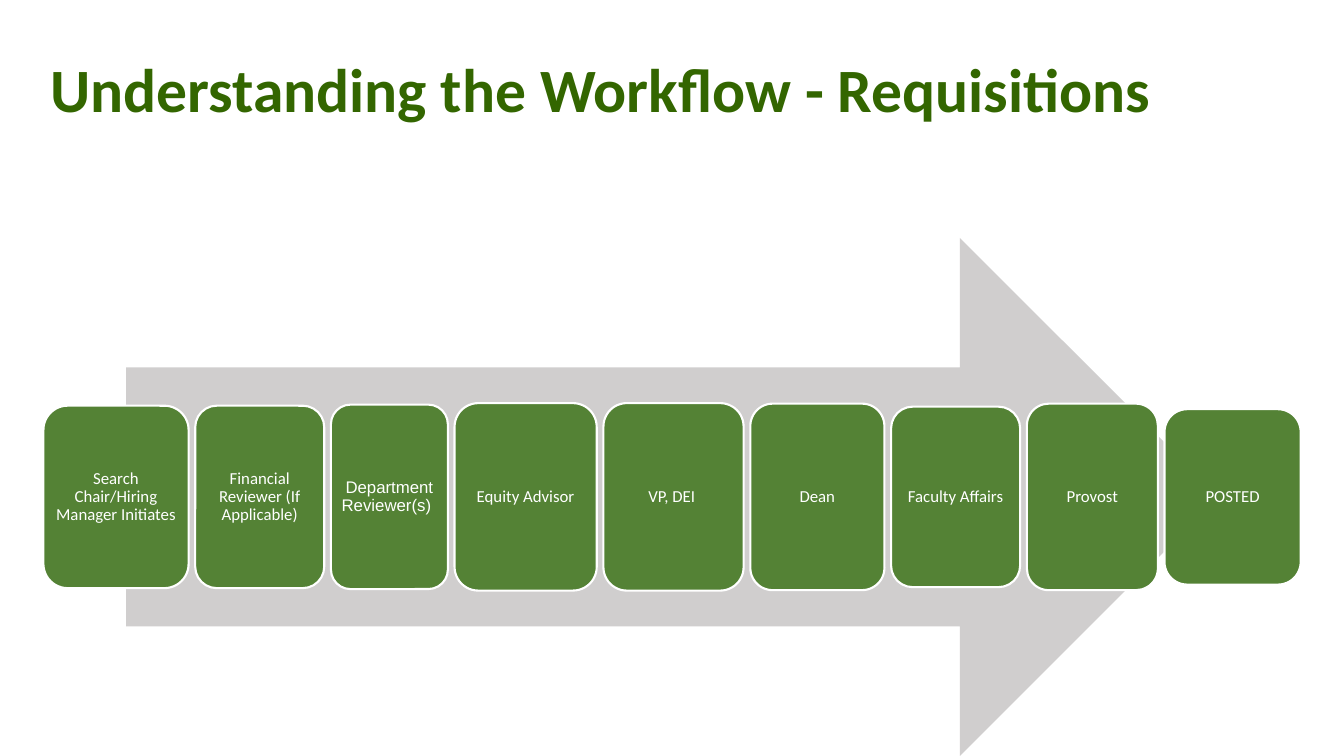
import pptx
import pptx.dml.color
import pptx.enum.shapes
import pptx.enum.text
import pptx.util

DARK_GREEN = pptx.dml.color.RGBColor(0x33, 0x66, 0x00)
STEP_GREEN = pptx.dml.color.RGBColor(0x54, 0x82, 0x35)
ARROW_GRAY = pptx.dml.color.RGBColor(0xD0, 0xCE, 0xCE)
WHITE = pptx.dml.color.RGBColor(0xFF, 0xFF, 0xFF)

SLIDE_WIDTH = pptx.util.Inches(13.33)
SLIDE_HEIGHT = pptx.util.Inches(7.5)
COLUMN = SLIDE_WIDTH / 100
ROW = SLIDE_HEIGHT / 100

TITLE_BOX = (3, 2.53, 86.27, 19.33)
ARROW_BOX = (9.38, 31.47, 81.32, 68.53)
STEPS_BOX = (3.23, 53.33, 93.55, 24.8)

STEPS = [
    ("Search Chair/Hiring Manager Initiates", "Calibri", 10.8, 24.13),
    ("Financial Reviewer (If Applicable)", "Calibri", 9.6, 24.13),
    ("Department Reviewer(s)\t", "Arial", 8.7, 24.4),
    ("Equity Advisor", "Calibri", 10.58, 24.8),
    ("VP, DEI\t", "Calibri", 10.43, 24.8),
    ("Dean", "Calibri", 9.98, 24.67),
    ("Faculty Affairs", "Calibri", 9.6, 23.87),
    ("Provost", "Calibri", 9.75, 24.67),
    ("POSTED", "Calibri", 10.13, 23.2),
]

STEP_FONT = {"size": pptx.util.Pt(12), "bold": False}
TITLE_FONT = {"size": pptx.util.Pt(44), "bold": True, "name": "Calibri"}
STEP_MARGINS = dict.fromkeys(
    ("margin_left", "margin_right", "margin_top", "margin_bottom"),
    pptx.util.Inches(0.05),
)


def apply_format(target, values):
    for name, value in values.items():
        setattr(target, name, value)


def to_lengths(box):
    left, top, width, height = box
    return [round(length) for length in (left * COLUMN, top * ROW, width * COLUMN, height * ROW)]


def write_text(shape, text, font_values, color, alignment):
    frame = shape.text_frame
    apply_format(frame, {
        "word_wrap": True,
        "vertical_anchor": pptx.enum.text.MSO_ANCHOR.MIDDLE,
    })
    para = frame.paragraphs[0]
    apply_format(para, {"alignment": alignment, "line_spacing": 0.9})
    span = para.add_run()
    span.text = text
    apply_format(span.font, font_values)
    span.font.color.rgb = color


def add_filled_shape(page, kind, box, color):
    shape = page.shapes.add_shape(kind, *to_lengths(box))
    shape.shadow.inherit = False
    shape.fill.solid()
    shape.fill.fore_color.rgb = color
    shape.line.fill.background()
    return shape


def add_title(page, box):
    title = page.shapes.add_textbox(*to_lengths(box))
    write_text(title, "Understanding the Workflow - Requisitions", TITLE_FONT,
               DARK_GREEN, pptx.enum.text.PP_ALIGN.LEFT)


def add_arrow(page, box):
    add_filled_shape(page, pptx.enum.shapes.MSO_SHAPE.RIGHT_ARROW, box, ARROW_GRAY)


def add_steps(page, box):
    left, top, total_width, total_height = box
    gap = (total_width - sum(step[2] for step in STEPS)) / (len(STEPS) - 1)
    for label, font_name, width, height in STEPS:
        step_box = (left, top + (total_height - height) / 2, width, height)
        step = add_filled_shape(
            page, pptx.enum.shapes.MSO_SHAPE.ROUNDED_RECTANGLE, step_box, STEP_GREEN)
        step.line.color.rgb = WHITE
        step.line.width = pptx.util.Pt(1.5)
        apply_format(step.text_frame, STEP_MARGINS)
        write_text(step, label, {**STEP_FONT, "name": font_name},
                   WHITE, pptx.enum.text.PP_ALIGN.CENTER)
        left += width + gap


def main():
    deck = pptx.Presentation()
    apply_format(deck, {"slide_width": SLIDE_WIDTH, "slide_height": SLIDE_HEIGHT})
    page = deck.slides.add_slide(deck.slide_layouts[6])
    add_title(page, TITLE_BOX)
    add_arrow(page, ARROW_BOX)
    add_steps(page, STEPS_BOX)
    deck.save("out.pptx")


if __name__ == "__main__":
    main()
